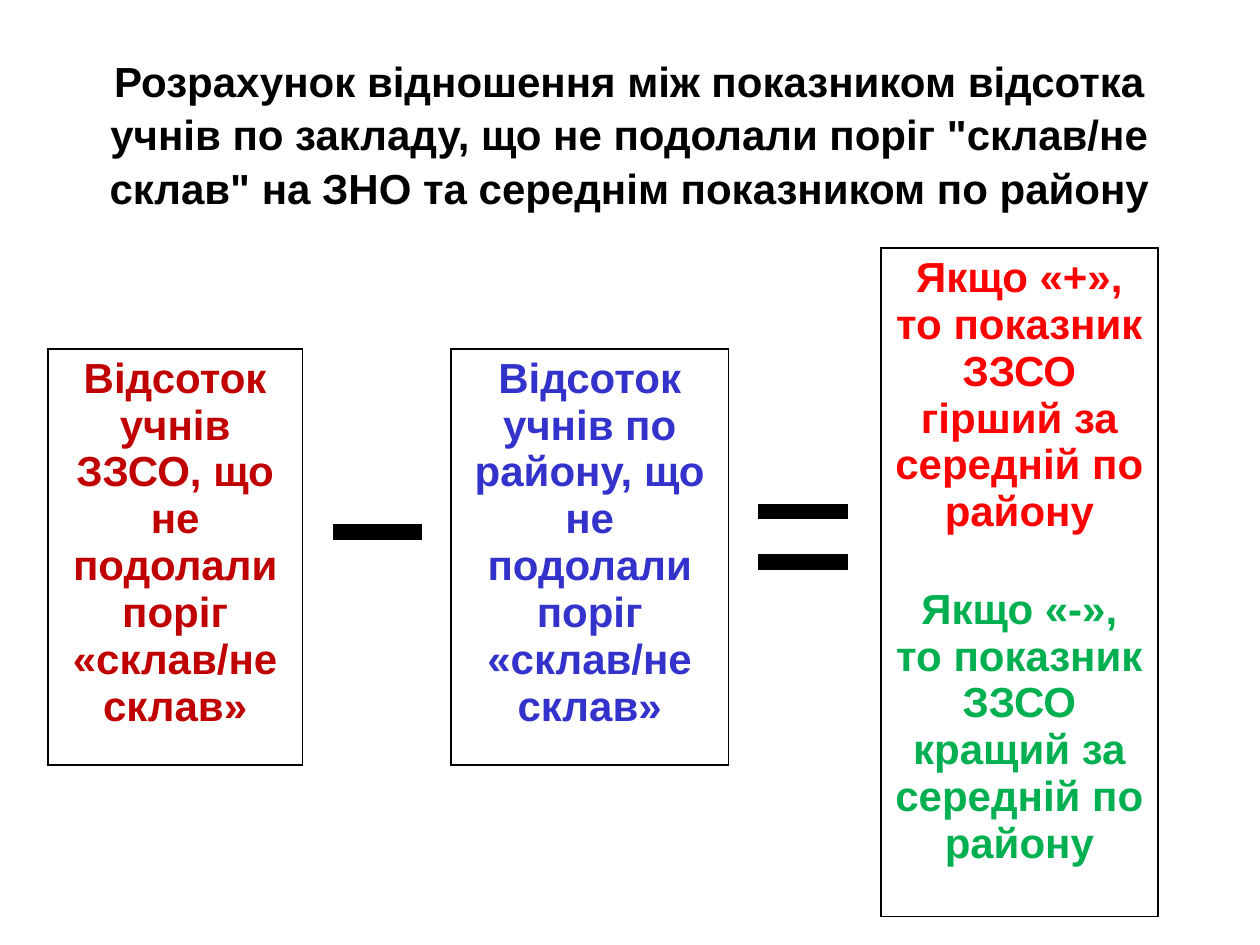
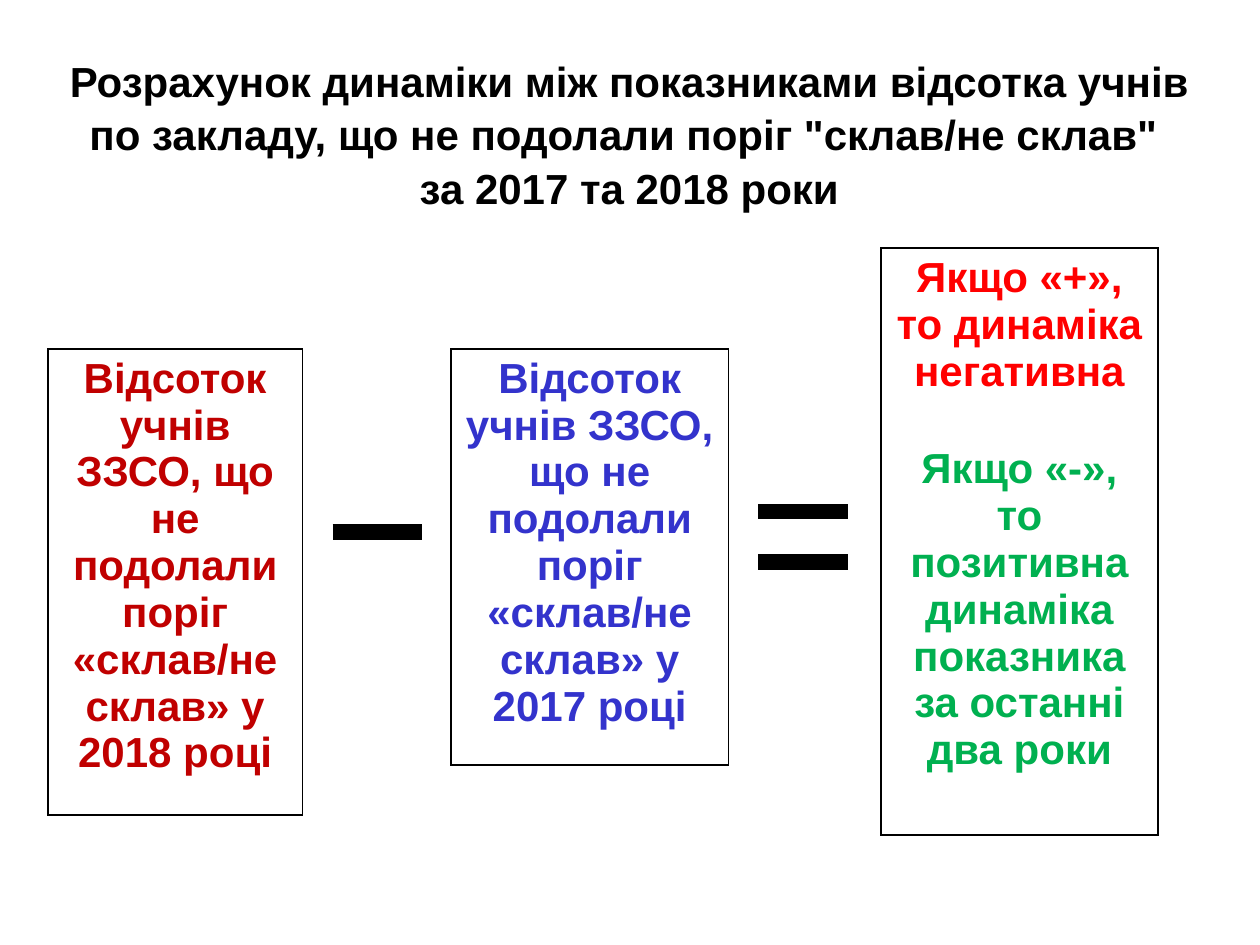
from lxml import etree
from pptx import Presentation
from pptx.dml.color import RGBColor
from pptx.enum.shapes import MSO_CONNECTOR
from pptx.enum.text import PP_ALIGN
from pptx.oxml import parse_xml
from pptx.oxml.ns import nsdecls, qn
from pptx.util import Inches, Pt

BLACK = RGBColor(0x00, 0x00, 0x00)
WHITE = RGBColor(0xFF, 0xFF, 0xFF)
DARK_RED = RGBColor(0xC0, 0x00, 0x00)
BLUE = RGBColor(0x33, 0x33, 0xCC)
RED = RGBColor(0xFF, 0x00, 0x00)
GREEN = RGBColor(0x00, 0xB0, 0x50)

prs = Presentation()
prs.slide_width, prs.slide_height = Inches(10), Inches(7.5)

# The slide is a grid of 100 columns by 100 rows.
COL, ROW = prs.slide_width / 100, prs.slide_height / 100

# Left, top and width of the three boxes: minuend, subtrahend, result.
BOXES = [(3.8, 36.93, 20.2), (35.8, 36.93, 22), (69.9, 26.27, 22)]
# Left and row of each bar of the minus and equals signs.
BARS = [(26.4, 56.27), (60.2, 54.13), (60.2, 59.47)]
BAR_LENGTH = 7.1

# Each box has its height in rows and its paragraphs with their colours.
SLIDES = [
    {
        "title": ['Розрахунок відношення між показником відсотка учнів по закладу, '
                  'що не подолали поріг "склав/не склав" на ЗНО та середнім '
                  'показником по району'],
        "boxes": [
            (44, [("Відсоток учнів ЗЗСО, що не подолали поріг «склав/не склав»", DARK_RED)]),
            (44, [("Відсоток учнів по району, що не подолали поріг «склав/не склав»", BLUE)]),
            (70.7, [("Якщо «+», то показник ЗЗСО гірший за середній по району", RED),
                    ("Якщо «-», то показник ЗЗСО кращий за середній по району", GREEN)]),
        ],
    },
    {
        "title": ['Розрахунок динаміки між показниками відсотка учнів по закладу, '
                  'що не подолали поріг "склав/не склав" ',
                  'за 2017 та 2018 роки'],
        "boxes": [
            (49.3, [("Відсоток учнів ЗЗСО, що не подолали поріг «склав/не склав» у 2018 році", DARK_RED)]),
            (44, [("Відсоток учнів ЗЗСО, що не подолали поріг «склав/не склав» у 2017 році", BLUE)]),
            (62.1, [("Якщо «+», то динаміка негативна", RED),
                    ("Якщо «-», то позитивна динаміка показника за останні два роки", GREEN)]),
        ],
    },
]


def add_text(tf, text, first=True, color=BLACK, size=24, bold=True, before=0, spacing=None):
    """Write one centred paragraph; the first one fills the empty paragraph."""
    p = tf.paragraphs[0] if first else tf.add_paragraph()
    p.alignment = PP_ALIGN.CENTER
    p.space_before = Pt(before)
    p.line_spacing = spacing
    r = p.add_run()
    r.text = text
    r.font.name, r.font.size, r.font.bold = "Arial", Pt(size), bold
    r.font.color.rgb = color


def style_cell(cell):
    """Give the cell a thin black border and a white fill."""
    for side in ("lnL", "lnR", "lnT", "lnB"):
        cell._tc.get_or_add_tcPr().append(parse_xml(
            f'<a:{side} {nsdecls("a")} w="{Pt(1)}"><a:solidFill>'
            f'<a:srgbClr val="{BLACK}"/></a:solidFill></a:{side}>'))
    cell.fill.solid()
    cell.fill.fore_color.rgb = WHITE


for content in SLIDES:
    s = prs.slides.add_slide(prs.slide_layouts[6])

    title = s.shapes.add_textbox(int(3.5 * COL), int(4.8 * ROW), int(92.9 * COL), int(17.47 * ROW))
    tf = title.text_frame
    tf.word_wrap = True
    for i, text in enumerate(content["title"]):
        add_text(tf, text, first=i == 0, spacing=1.07)

    for (left, top, width), (height, paragraphs) in zip(BOXES, content["boxes"]):
        frame = s.shapes.add_table(1, 1, int(left * COL), int(top * ROW),
                                   int(width * COL), int(height * ROW))
        frame.table.first_row = frame.table.horz_banding = False
        cell = frame.table.cell(0, 0)
        style_cell(cell)
        for i, (text, color) in enumerate(paragraphs):
            add_text(cell.text_frame, text, first=i == 0, color=color, before=29 if i else 0)

    for left, row in BARS:
        bar = s.shapes.add_connector(MSO_CONNECTOR.STRAIGHT, int(left * COL), int(row * ROW),
                                     int((left + BAR_LENGTH) * COL), int(row * ROW))
        bar.line.color.rgb = BLACK
        bar.line.width = Pt(9)
        etree.SubElement(bar._element.spPr, qn("a:effectLst"))

prs.save("out.pptx")
